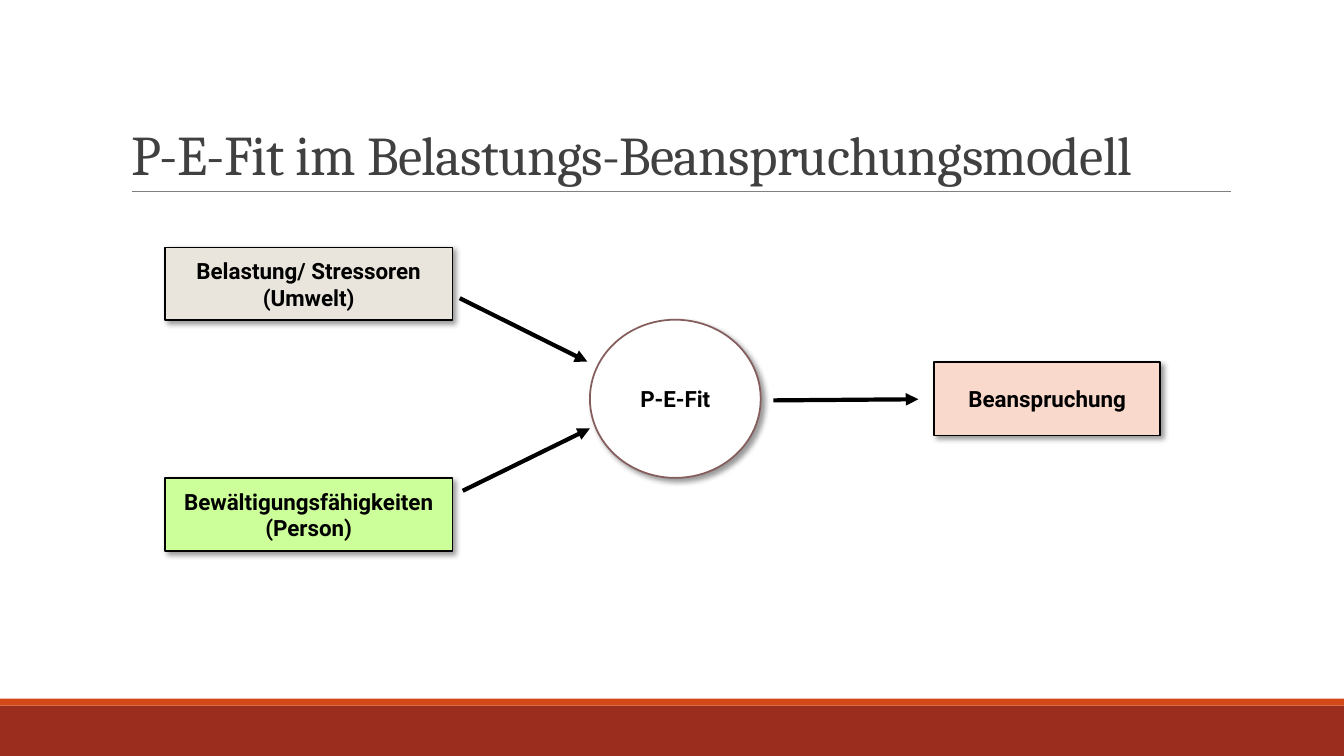
from lxml import etree
from pptx import Presentation
from pptx import util as u
from pptx.dml.color import RGBColor
from pptx.enum import shapes, text
from pptx.oxml.ns import qn

Pt = u.Pt
COLORS = {
    "footer": "9B2D1F", "accent": "D34817", "rule": "808080", "title": "404040",
    "ink": "000000", "fit": "FFFFFF", "fit_edge": "855D5D", "strain": "FAD9CD",
    "person": "CCFF99", "environment": "E9E5DC",
}


def rgb(name):
    return RGBColor.from_string(COLORS[name])


def connect(start, end, color, width):
    line = slide.shapes.add_connector(
        shapes.MSO_CONNECTOR.STRAIGHT, *[Pt(v) for v in start + end])
    line.line.color.rgb = rgb(color)
    line.line.width = Pt(width)
    etree.SubElement(line._element.spPr, qn("a:effectLst"))
    return line


prs = Presentation()
prs.slide_width, prs.slide_height = Pt(960), Pt(540)
slide = prs.slides.add_slide(prs.slide_layouts[5])

# Footer bands
for top, height, color in [(504, 36, "footer"), (499, 5, "accent")]:
    band = slide.shapes.add_shape(
        shapes.MSO_SHAPE.RECTANGLE, 0, Pt(top), Pt(960), Pt(height))
    band.shadow.inherit = False
    band.fill.solid()
    band.fill.fore_color.rgb = rgb(color)
    band.line.fill.background()

# Title and the rule below it
connect((94.3, 136.8), (879.1, 136.8), "rule", 0.5)
title = slide.shapes.title
title.left, title.top, title.width, title.height = Pt(86.4), Pt(22.3), Pt(820.8), Pt(114.5)
title.text_frame.vertical_anchor = text.MSO_ANCHOR.BOTTOM
title.text_frame.auto_size = text.MSO_AUTO_SIZE.NONE
title.text_frame.word_wrap = True
heading = title.text_frame.paragraphs[0]
heading.alignment = text.PP_ALIGN.LEFT
heading.line_spacing = 0.85
for words, size in [("P-E-Fit im ", 40), ("Belastungs-Beanspruchungsmodell", 39)]:
    run = heading.add_run()
    run.text = words
    run.font.name, run.font.size = "Cambria", Pt(size)
    run.font.color.rgb = rgb("title")
    run.font._element.set("spc", "-50")

# Model parts: shape, left, top, width, height, fill, edge, label
RECT, OVAL = shapes.MSO_SHAPE.RECTANGLE, shapes.MSO_SHAPE.OVAL
model = [
    (OVAL, 421.4, 228.4, 122, 113, "fit", "fit_edge", "P-E-Fit"),
    (RECT, 667.4, 258.6, 161.2, 52.4, "strain", "ink", "Beanspruchung"),
    (RECT, 117.8, 341.6, 205.4, 52, "person", "ink", "Bewältigungsfähigkeiten (Person)"),
    (RECT, 117.8, 176.8, 205.4, 52, "environment", "ink", "Belastung/ Stressoren (Umwelt)"),
]
for kind, left, top, width, height, fill, edge, label in model:
    part = slide.shapes.add_shape(kind, Pt(left), Pt(top), Pt(width), Pt(height))
    part.fill.solid()
    part.fill.fore_color.rgb = rgb(fill)
    part.line.color.rgb = rgb(edge)
    part.line.width = Pt(1.25)

    # Soft shadow to the lower right
    part.shadow.inherit = False
    effects = part._element.spPr.find(qn("a:effectLst"))
    shadow = etree.SubElement(effects, qn("a:outerShdw"), blurRad=str(Pt(4)),
                              dist=str(Pt(3)), dir=str(45 * 60000),
                              algn="tl", rotWithShape="0")
    tint = etree.SubElement(shadow, qn("a:srgbClr"), val=COLORS["ink"])
    etree.SubElement(tint, qn("a:alpha"), val="40000")

    part.text_frame.word_wrap = True
    part.text_frame.vertical_anchor = text.MSO_ANCHOR.MIDDLE
    caption = part.text_frame.paragraphs[0]
    caption.alignment = text.PP_ALIGN.CENTER
    run = caption.add_run()
    run.text = label
    run.font.name, run.font.size, run.font.bold = "Roboto", Pt(16), True
    run.font.color.rgb = rgb("ink")

# Arrows into and out of the fit
for start, end in [((330.5, 350.6), (421.4, 306)),
                   ((552.4, 286), (656, 285.2)),
                   ((328.4, 213), (419.6, 258.4))]:
    arrow = connect(start, end, "ink", 3)
    etree.SubElement(arrow.line._get_or_add_ln(), qn("a:tailEnd"), type="triangle")

prs.save("out.pptx")
